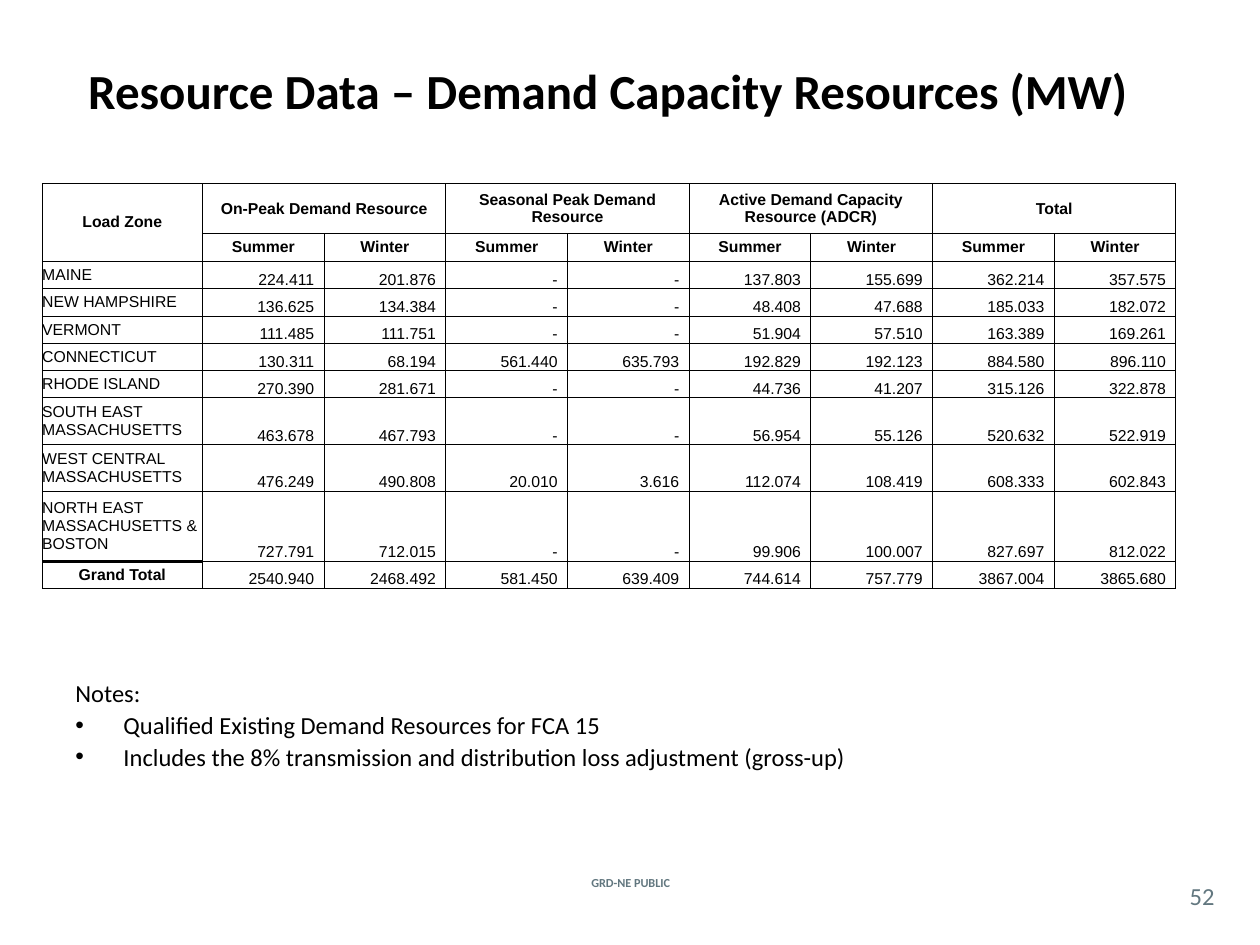
import pptx
import pptx.dml.color
import pptx.enum.text
import pptx.oxml
import pptx.oxml.ns
import pptx.util

Cm = pptx.util.Cm
Pt = pptx.util.Pt
ALIGN = pptx.enum.text.PP_ALIGN
ANCHOR = pptx.enum.text.MSO_ANCHOR

BLACK, GREY, WHITE = "000000", "62777F", "FFFFFF"
MARGINS = ("margin_left", "margin_top", "margin_right", "margin_bottom")
TITLE = {"name": "Calibri", "size": Pt(28), "bold": True}
NOTE = {"name": "Calibri", "size": Pt(14), "bold": False}
FOOTER = {"name": "Calibri", "size": Pt(7), "bold": True}
HEAD = {"name": "Arial", "size": Pt(9), "bold": True}
BODY = HEAD | {"bold": False}

GROUPS = [
    "On-Peak Demand Resource",
    "Seasonal Peak Demand Resource",
    "Active Demand Capacity Resource (ADCR)",
    "Total",
]
ZONES = [
    ("MAINE", "224.411 201.876 - - 137.803 155.699 362.214 357.575"),
    ("NEW HAMPSHIRE", "136.625 134.384 - - 48.408 47.688 185.033 182.072"),
    ("VERMONT", "111.485 111.751 - - 51.904 57.510 163.389 169.261"),
    ("CONNECTICUT", "130.311 68.194 561.440 635.793 192.829 192.123 884.580 896.110"),
    ("RHODE ISLAND", "270.390 281.671 - - 44.736 41.207 315.126 322.878"),
    ("SOUTH EAST MASSACHUSETTS", "463.678 467.793 - - 56.954 55.126 520.632 522.919"),
    ("WEST CENTRAL MASSACHUSETTS", "476.249 490.808 20.010 3.616 112.074 108.419 608.333 602.843"),
    ("NORTH EAST MASSACHUSETTS & BOSTON", "727.791 712.015 - - 99.906 100.007 827.697 812.022"),
    ("Grand Total", "2540.940 2468.492 581.450 639.409 744.614 757.779 3867.004 3865.680"),
]
ROW_HEIGHTS = [1.01, 0.56] + [0.55] * 5 + [0.94, 0.94, 1.41, 0.55]
ZONE_WIDTH = 3.23


def rgb(color):
    """Turn a hex string into a colour."""
    return pptx.dml.color.RGBColor.from_string(color)


def set_attrs(obj, values):
    """Set each named attribute of an object."""
    for name, value in values.items():
        setattr(obj, name, value)


def write(p, text, font, color=BLACK, align=ALIGN.LEFT):
    """Write one formatted run into a paragraph."""
    p.alignment = align
    r = p.add_run()
    r.text = text
    set_attrs(r.font, font)
    r.font.color.rgb = rgb(color)


def add_box(s, box, anchor, insets=(0.25, 0.13, 0.25, 0.13)):
    """Add an empty text box and return its text frame."""
    tf = s.shapes.add_textbox(*map(Cm, box)).text_frame
    set_attrs(tf, {"word_wrap": True, "vertical_anchor": anchor})
    set_attrs(tf, dict(zip(MARGINS, map(Cm, insets))))
    return tf


def add_title(s, box):
    """Add the slide title."""
    tf = add_box(s, box, ANCHOR.MIDDLE, (0.28, 0.15, 0.28, 0.15))
    write(tf.paragraphs[0], "Resource Data – Demand Capacity Resources (MW)", TITLE)


def add_notes(s, box):
    """Add the notes heading and its bullets."""
    tf = add_box(s, box, ANCHOR.TOP)
    write(tf.paragraphs[0], "Notes:", NOTE)
    for text in (
        "Qualified Existing Demand Resources for FCA 15",
        "Includes the 8% transmission and distribution loss adjustment (gross-up)",
    ):
        p = tf.add_paragraph()
        p.space_before = Pt(1.4)
        pPr = p._p.get_or_add_pPr()
        pPr.set("marL", str(Cm(0.97)))
        pPr.set("indent", str(-Cm(0.97)))
        ns = pptx.oxml.ns.nsdecls("a")
        pPr.append(pptx.oxml.parse_xml(f'<a:buFont {ns} typeface="Arial"/>'))
        pPr.append(pptx.oxml.parse_xml(f'<a:buChar {ns} char="•"/>'))
        write(p, text, NOTE)


def add_footer(s, label_box, number_box):
    """Add the classification label and the page number."""
    tf = add_box(s, label_box, ANCHOR.MIDDLE)
    write(tf.paragraphs[0], "GRD-NE PUBLIC", FOOTER, GREY, ALIGN.CENTER)
    tf = add_box(s, number_box, ANCHOR.MIDDLE, (0, 0, 0, 0))
    write(tf.paragraphs[0], "52", NOTE, GREY, ALIGN.CENTER)


def set_borders(cell, **widths):
    """Draw the four cell edges, half a point unless a width is given."""
    tcPr = cell._tc.get_or_add_tcPr()
    for side in "LRTB":
        tcPr.append(pptx.oxml.parse_xml(
            f'<a:ln{side} {pptx.oxml.ns.nsdecls("a")} w="{Pt(widths.get(side, 0.5))}">'
            f'<a:solidFill><a:srgbClr val="{BLACK}"/></a:solidFill></a:ln{side}>'
        ))


def fill_cell(cell, text, font, align, anchor, right=0, **widths):
    """Write one table cell with its margins, borders and fill."""
    set_attrs(cell, dict(zip(MARGINS, map(Cm, (0, 0, right, 0)))))
    cell.vertical_anchor = anchor
    set_borders(cell, **widths)
    cell.fill.solid()
    cell.fill.fore_color.rgb = rgb(WHITE)
    write(cell.text_frame.paragraphs[0], text, font, align=align)


def add_resource_table(s, box):
    """Add the table of demand resources by load zone."""
    columns = 2 * len(GROUPS)
    table = s.shapes.add_table(len(ROW_HEIGHTS), columns + 1, *map(Cm, box)).table
    set_attrs(table, {"first_row": False, "horz_banding": False})
    for row, height in zip(table.rows, ROW_HEIGHTS):
        row.height = Cm(height)
    for i, column in enumerate(table.columns):
        column.width = Cm((box[2] - ZONE_WIDTH) / columns if i else ZONE_WIDTH)

    header = ["Load Zone"] + [text for group in GROUPS for text in (group, "")]
    for i, texts in enumerate((header, [""] + ["Summer", "Winter"] * len(GROUPS))):
        for j, text in enumerate(texts):
            fill_cell(table.cell(i, j), text, HEAD, ALIGN.CENTER, ANCHOR.MIDDLE)
    table.cell(0, 0).merge(table.cell(1, 0))
    for j in range(1, columns, 2):
        table.cell(0, j).merge(table.cell(0, j + 1))

    total = len(ROW_HEIGHTS) - 1
    for i, (zone, values) in enumerate(ZONES, 2):
        font, align = (HEAD, ALIGN.CENTER) if i == total else (BODY, ALIGN.LEFT)
        widths = {total - 1: {"B": 2}, total: {"T": 2}}.get(i, {})
        fill_cell(table.cell(i, 0), zone, font, align, ANCHOR.MIDDLE, **widths)
        for j, value in enumerate(values.split(), 1):
            fill_cell(table.cell(i, j), value, BODY, ALIGN.RIGHT, ANCHOR.BOTTOM, 0.2)


def main():
    """Build and save the slide."""
    prs = pptx.Presentation()
    set_attrs(prs, {"slide_width": Cm(25.4), "slide_height": Cm(19.05)})
    s = prs.slides.add_slide(prs.slide_layouts[6])
    add_footer(s, (10.85, 17.58, 3.73, 0.43), (23.7, 17.68, 1.07, 0.74))
    add_title(s, (1.5, 0, 23.06, 3.61))
    add_notes(s, (1.27, 13.54, 23.06, 2.74))
    add_resource_table(s, (0.85, 3.7, 22.86, sum(ROW_HEIGHTS)))
    prs.save("out.pptx")


if __name__ == "__main__":
    main()
